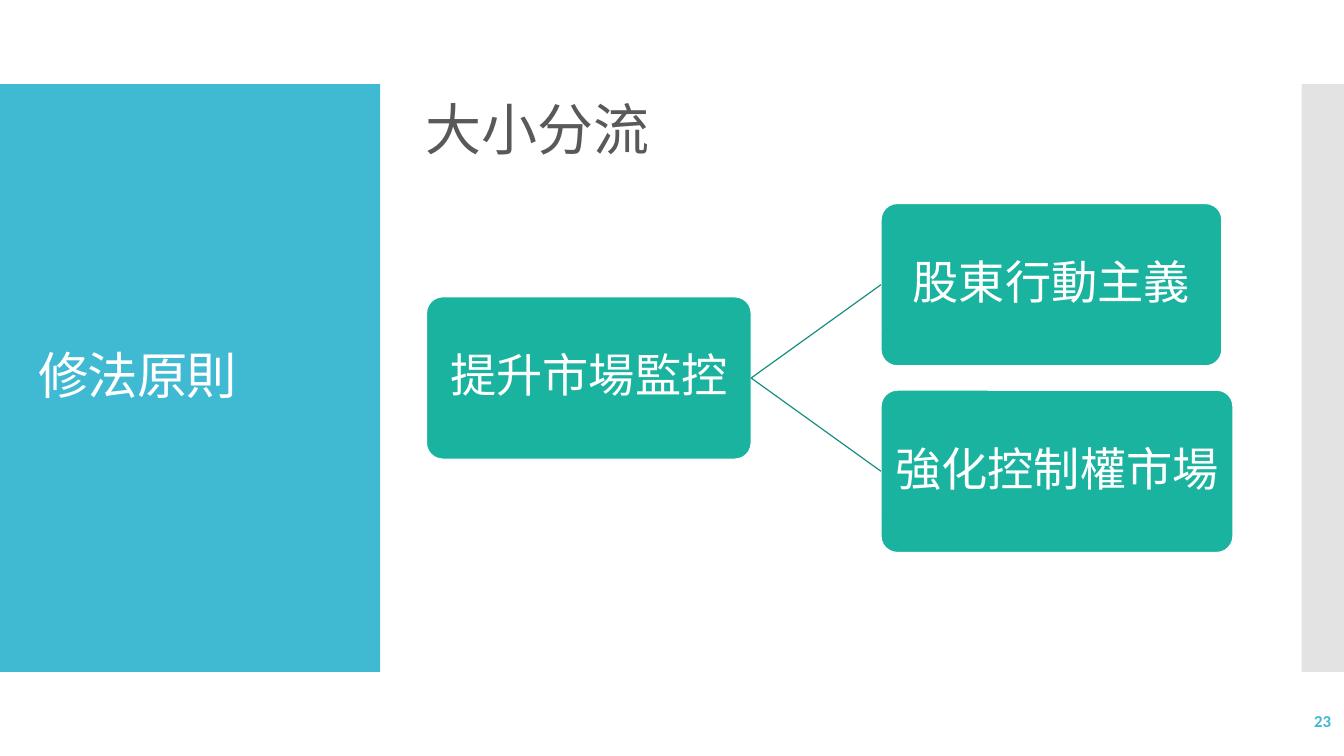
from pptx import Presentation
from pptx.dml.color import RGBColor
from pptx.enum.shapes import MSO_CONNECTOR, MSO_SHAPE
from pptx.enum.text import MSO_ANCHOR, PP_ALIGN
from pptx.oxml.ns import qn
from pptx.util import Inches, Pt
from lxml import etree

RECT, ROUND = MSO_SHAPE.RECTANGLE, MSO_SHAPE.ROUNDED_RECTANGLE
LINE = MSO_CONNECTOR.STRAIGHT
MIDDLE = MSO_ANCHOR.MIDDLE
LEFT, CENTER, RIGHT = PP_ALIGN.LEFT, PP_ALIGN.CENTER, PP_ALIGN.RIGHT

TITLE = "修法原則"
HEAD = "大小分流"
ROOT = "提升市場監控"
LEAVES = [("股東行動主義", 3.38), ("強化控制權市場", 3.49)]
PAGE = "23"

WIDE, HIGH = 13.33, 7.5
BAND_TOP, BAND_H = HIGH / 9, HIGH * 7 / 9
SIDE_W, EDGE_W = 3.77, 0.42
ROOT_X, ROOT_W, BOX_H = 4.23, 3.22, 1.61
LEAF_X = ROOT_X + ROOT_W * 1.4
STEP = BOX_H * 1.15
MID = HIGH / 2
BLUE, GREEN, DEEP, WHITE = "40BAD2", "1AB39F", "158F7F", "FFFFFF"

deck = Presentation()
deck.slide_width, deck.slide_height = Inches(WIDE), Inches(HIGH)
slide = deck.slides.add_slide(deck.slide_layouts[6])


def color(code):
    return RGBColor.from_string(code)


def write(shape, text, size, ink=WHITE, align=LEFT, bold=False, pad=0.1, lead=0.9, track=0):
    frame = shape.text_frame
    frame.word_wrap = True
    frame.vertical_anchor = MIDDLE
    frame.margin_left = frame.margin_right = Inches(pad)
    frame.margin_top = frame.margin_bottom = Inches(pad / 2)
    para = frame.paragraphs[0]
    para.alignment, para.line_spacing = align, lead
    run = para.add_run()
    run.text = text
    font = run.font
    font.name, font.size, font.bold = "Calibri", Pt(size), bold
    font.color.rgb = color(ink)
    if track:
        run._r.get_or_add_rPr().set("spc", str(track))


def block(kind, x, y, w, h, fill):
    shape = slide.shapes.add_shape(kind, Inches(x), Inches(y), Inches(w), Inches(h))
    shape.shadow.inherit = False
    shape.fill.solid()
    shape.fill.fore_color.rgb = color(fill)
    shape.line.fill.background()
    return shape


def label(x, y, w, h, text, size, **style):
    box = slide.shapes.add_textbox(Inches(x), Inches(y), Inches(w), Inches(h))
    write(box, text, size, **style)


def node(text, x, mid, w):
    shape = block(ROUND, x, mid - BOX_H / 2, w, BOX_H, GREEN)
    shape.adjustments[0] = 0.1
    shape.line.color.rgb = color(WHITE)
    shape.line.width = Pt(0.85)
    write(shape, text, 33, align=CENTER, pad=0.06)
    return shape


def link(start, end):
    line = slide.shapes.add_connector(LINE, 0, 0, 0, 0)
    line.begin_connect(start, 3)
    line.end_connect(end, 1)
    line.line.color.rgb = color(DEEP)
    line.line.width = Pt(0.85)
    etree.SubElement(line._element.spPr, qn("a:effectLst"))


block(RECT, 0, BAND_TOP, SIDE_W, BAND_H, BLUE)
edge = block(RECT, WIDE - EDGE_W, BAND_TOP, EDGE_W, BAND_H, "C8C8C8")
tone = edge._element.spPr.find(qn("a:solidFill"))[0]
etree.SubElement(tone, qn("a:alpha")).set("val", "50000")

label(0.28, BAND_TOP + 0.4, 3.22, BAND_H - 0.8, TITLE, 36, track=-60)
label(4.12, 0.91, 8, 0.8, HEAD, 40, ink="595959")

root = node(ROOT, ROOT_X, MID, ROOT_W)
for row, (text, width) in enumerate(LEAVES):
    shift = row - (len(LEAVES) - 1) / 2
    link(root, node(text, LEAF_X, MID + shift * STEP, width))

label(11.63, 6.95, 1.67, 0.4, PAGE, 12, ink=BLUE, align=RIGHT, bold=True, lead=1.0)

deck.save("out.pptx")
